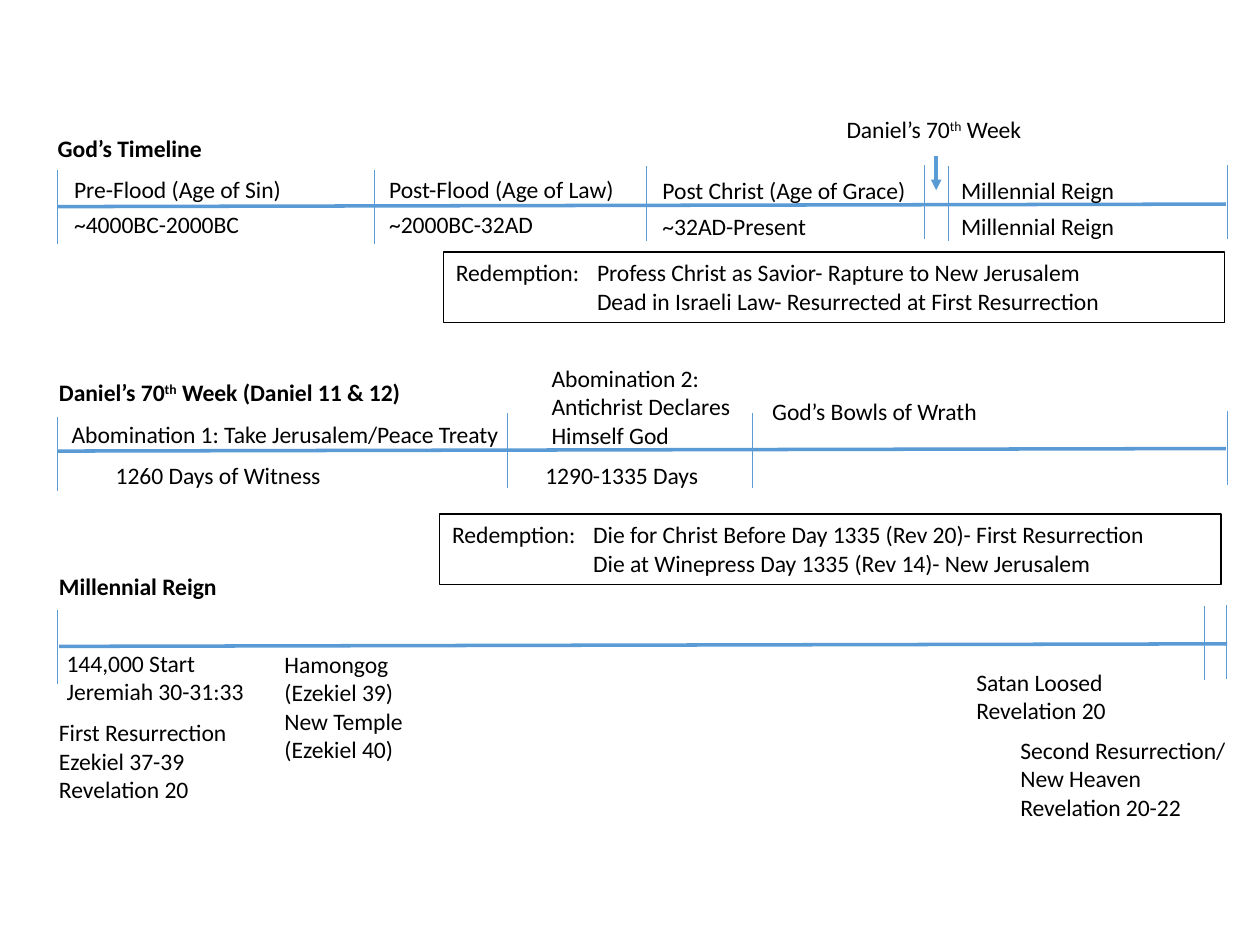
from lxml.etree import SubElement
from pptx import Presentation
from pptx.dml.color import RGBColor
from pptx.enum.shapes import MSO_CONNECTOR, MSO_SHAPE
from pptx.enum.text import MSO_ANCHOR, MSO_AUTO_SIZE, PP_ALIGN
from pptx.oxml.ns import qn
from pptx.util import Inches, Pt

BLUE = "5B9BD5"
BLACK = "000000"
TICK = 0.59  # height of a period mark


def color(code):
    return RGBColor.from_string(code)


def write(frame, text, size=13.5, bold=False, tab=None):
    """Fill a frame: newlines split paragraphs, ^marks^ raise text."""
    frame.word_wrap = True
    frame.auto_size = MSO_AUTO_SIZE.SHAPE_TO_FIT_TEXT
    for i, line in enumerate(text.split("\n")):
        para = frame.paragraphs[0] if i == 0 else frame.add_paragraph()
        para.alignment = PP_ALIGN.LEFT
        if tab:
            tabs = SubElement(para._p.get_or_add_pPr(), qn("a:tabLst"))
            SubElement(tabs, qn("a:tab"), pos=str(Inches(tab)), algn="l")
        for j, part in enumerate(line.split("^")):
            run = para.add_run()
            run.text = part
            run.font.name = "Calibri"
            run.font.size = Pt(size)
            run.font.bold = bold
            run.font.color.rgb = color(BLACK)
            if j % 2:
                run._r.get_or_add_rPr().set("baseline", "30000")


def label(slide, x, y, w, h, text, **style):
    box = slide.shapes.add_textbox(Inches(x), Inches(y), Inches(w), Inches(h))
    write(box.text_frame, text, **style)


def note(slide, x, y, text):
    """Outlined box with a tabbed second column."""
    box = slide.shapes.add_shape(
        MSO_SHAPE.RECTANGLE, Inches(x), Inches(y), Inches(6.2), Inches(0.56))
    box.shadow.inherit = False
    box.fill.background()
    box.line.color.rgb = color(BLACK)
    box.line.width = Pt(0.75)
    box.text_frame.vertical_anchor = MSO_ANCHOR.TOP
    write(box.text_frame, text, tab=1.12)


def rule(slide, x1, y1, x2, y2, width=0.5, arrow=False):
    line = slide.shapes.add_connector(
        MSO_CONNECTOR.STRAIGHT, Inches(x1), Inches(y1), Inches(x2), Inches(y2))
    line.line.color.rgb = color(BLUE)
    line.line.width = Pt(width)
    if arrow:
        SubElement(line.line._get_or_add_ln(), qn("a:tailEnd"), type="triangle")
    SubElement(line._element.spPr, qn("a:effectLst"))


def axis(slide, left, y, ticks):
    """Slightly rising time axis with its period marks."""
    rule(slide, left, y, left + 9.27, y - 0.02, width=0)
    for x, top in ticks:
        rule(slide, x, top, x, top + TICK)


def ages(slide):
    label(slide, 0.36, 1.01, 1.76, 0.33, "God’s Timeline", bold=True)
    axis(slide, 0.46, 1.64, [(0.46, 1.35), (2.97, 1.35), (5.13, 1.32),
                             (7.34, 1.31), (7.53, 1.32), (9.74, 1.31)])
    periods = [
        (0.49, 1.34, "Pre-Flood (Age of Sin)", "~4000BC-2000BC"),
        (2.99, 1.34, "Post-Flood (Age of Law)", "~2000BC-32AD"),
        (5.16, 1.35, "Post Christ (Age of Grace)", "~32AD-Present"),
        (7.53, 1.35, "Millennial Reign", "Millennial Reign"),
    ]
    for x, y, name, span in periods:
        label(slide, x, y, 2.27, 0.33, name)
        label(slide, x, y + 0.28, 2.27, 0.33, span)
    label(slide, 6.62, 0.86, 1.65, 0.34, "Daniel’s 70^th^ Week")
    rule(slide, 7.43, 1.24, 7.43, 1.51, width=2, arrow=True)
    note(slide, 3.52, 2,
         "Redemption:\tProfess Christ as Savior- Rapture to New Jerusalem\n"
         "\tDead in Israeli Law- Resurrected at First Resurrection")


def week(slide):
    label(slide, 0.37, 2.95, 3.77, 0.33,
          "Daniel’s 70^th^ Week (Daniel 11 & 12)", bold=True)
    axis(slide, 0.46, 3.58,
         [(0.46, 3.31), (4.03, 3.28), (5.97, 3.28), (9.74, 3.26)])
    label(slide, 0.47, 3.28, 4.41, 0.33,
          "Abomination 1: Take Jerusalem/Peace Treaty")
    label(slide, 4.28, 2.84, 1.63, 0.78,
          "Abomination 2: Antichrist Declares Himself God")
    label(slide, 6.03, 3.1, 4.41, 0.33, "God’s Bowls of Wrath")
    label(slide, 0.82, 3.61, 2.27, 0.33, "1260 Days of Witness")
    label(slide, 4.23, 3.61, 2.27, 0.33, "1290-1335 Days")
    note(slide, 3.49, 4.08,
         "Redemption:\tDie for Christ Before Day 1335 (Rev 20)- First Resurrection\n"
         "\tDie at Winepress Day 1335 (Rev 14)- New Jerusalem")


def reign(slide):
    label(slide, 0.37, 4.49, 1.76, 0.33, "Millennial Reign", bold=True)
    axis(slide, 0.47, 5.13, [(0.46, 4.84), (9.56, 4.81), (9.73, 4.8)])
    label(slide, 0.43, 5.1, 1.69, 0.56, "144,000 Start\nJeremiah 30-31:33")
    label(slide, 0.37, 5.65, 1.76, 0.78,
          "First Resurrection\nEzekiel 37-39\nRevelation 20")
    label(slide, 2.16, 5.11, 1.34, 1.01,
          "Hamongog (Ezekiel 39)\nNew Temple\n(Ezekiel 40)")
    label(slide, 7.65, 5.25, 1.76, 0.56, "Satan Loosed\nRevelation 20")
    label(slide, 8, 5.79, 1.9, 0.78,
          "Second Resurrection/ New Heaven\nRevelation 20-22")


def main():
    deck = Presentation()
    deck.slide_width, deck.slide_height = Inches(10), Inches(7.5)
    slide = deck.slides.add_slide(deck.slide_layouts[6])
    ages(slide)
    week(slide)
    reign(slide)
    deck.save("out.pptx")


if __name__ == "__main__":
    main()
